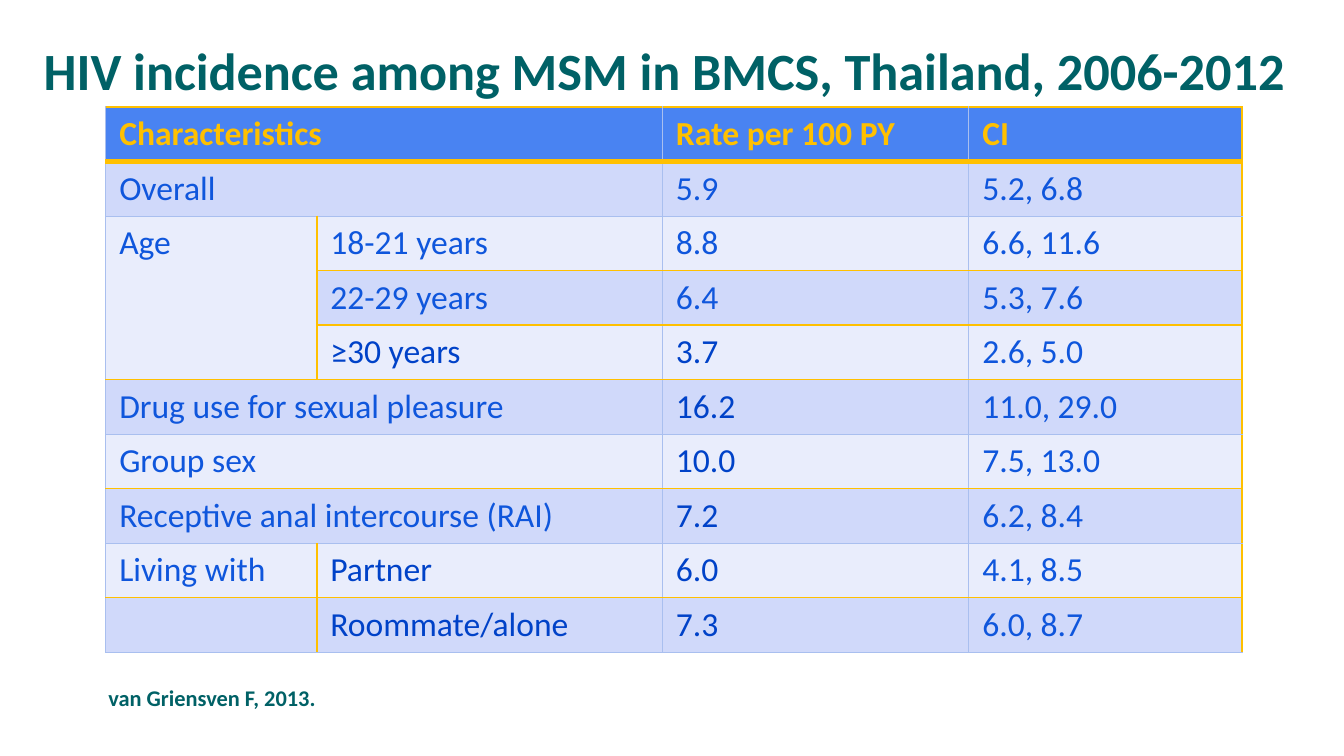
from dataclasses import dataclass

from lxml.etree import SubElement
from pptx import Presentation
from pptx.dml.color import RGBColor as Color
from pptx.enum.text import MSO_ANCHOR as Anchor, PP_ALIGN as Align
from pptx.oxml.ns import qn
from pptx.util import Cm, Pt


@dataclass(frozen=True)
class Theme:
    """Colours, font and type sizes of the deck."""
    font: str = "Calibri"
    teal: str = "006166"
    gold: str = "FFC000"
    header: str = "4983F2"
    bands: tuple = ("E9EDFC", "D0D9FA")
    text: str = "0F56DC"
    strong: str = "0042C8"
    pale: str = "A9BFEF"
    title_size: int = 28
    table_size: int = 18
    source_size: int = 12


ROWS = [
    ["Characteristics", "", "Rate per 100 PY", "CI"],
    ["Overall", "", "5.9", "5.2, 6.8"],
    ["Age", "18-21 years", "8.8", "6.6, 11.6"],
    ["", "22-29 years", "6.4", "5.3, 7.6"],
    ["", "≥30 years", "3.7", "2.6, 5.0"],
    ["Drug use for sexual pleasure", "", "16.2", "11.0, 29.0"],
    ["Group sex", "", "10.0", "7.5, 13.0"],
    ["Receptive anal intercourse (RAI)", "", "7.2", "6.2, 8.4"],
    ["Living with", "Partner", "6.0", "4.1, 8.5"],
    ["", "Roommate/alone", "7.3", "6.0, 8.7"],
]
COLUMN_WIDTHS = [3.99, 6.53, 5.79, 5.16]
ROW_HEIGHT = 1.03
AGE_ROWS = (2, 4)
GOLD_ROW_EDGES = {0, 3, 4, 5, 7, 9}
GOLD_COLUMN_EDGES = {1, 4}
FIRST_STRONG_ROW = 4


def write_text(frame, text, *, font, size, color, bold=False, align=Align.LEFT, spacing=None):
    """Write one formatted paragraph into a text frame."""
    para = frame.paragraphs[0]
    para.alignment = align
    if spacing:
        para.line_spacing = spacing
    span = para.add_run()
    span.text = text
    span.font.name, span.font.size, span.font.bold = font, Pt(size), bold
    span.font.color.rgb = Color.from_string(color)


def draw_border(cell, side, color, width):
    """Add a solid border to one side of a table cell."""
    properties = cell._tc.get_or_add_tcPr()
    line = SubElement(properties, qn(f"a:ln{side}"), w=str(Pt(width)))
    fill = SubElement(line, qn("a:solidFill"))
    SubElement(fill, qn("a:srgbClr"), val=color)


class Page:
    """Hold the theme and the current slide and add elements to it."""

    def __init__(self, deck, theme):
        """Start a title-only slide."""
        self.theme = theme
        self.slide = deck.slides.add_slide(deck.slide_layouts[5])

    def title(self, text, left, top, width, height):
        """Place and fill the title placeholder."""
        box = self.slide.shapes.title
        box.left, box.top, box.width, box.height = map(Cm, (left, top, width, height))
        box.text_frame.word_wrap = True
        box.text_frame.vertical_anchor = Anchor.BOTTOM
        write_text(box.text_frame, text, font=self.theme.font, size=self.theme.title_size,
                   color=self.theme.teal, bold=True, align=Align.CENTER, spacing=Pt(30))

    def source(self, text, left, top, width, height):
        """Add the source line."""
        box = self.slide.shapes.add_textbox(*map(Cm, (left, top, width, height)))
        box.text_frame.word_wrap = True
        box.text_frame.vertical_anchor = Anchor.BOTTOM
        write_text(box.text_frame, text, font=self.theme.font, size=self.theme.source_size,
                   color=self.theme.teal, bold=True, spacing=1.5)

    def row_edge(self, edge):
        """Return colour and width of a horizontal grid line."""
        if edge == 1:
            return self.theme.gold, 3
        return (self.theme.gold, 1) if edge in GOLD_ROW_EDGES else (self.theme.pale, 0.5)

    def column_edge(self, edge):
        """Return colour and width of a vertical grid line."""
        return (self.theme.gold, 1) if edge in GOLD_COLUMN_EDGES else (self.theme.pale, 0.5)

    def cell(self, cell, text, row, column):
        """Format one table cell by its place in the grid."""
        theme = self.theme
        draw_border(cell, "L", *self.column_edge(column))
        draw_border(cell, "R", *self.column_edge(column + cell.span_width))
        draw_border(cell, "T", *self.row_edge(row))
        draw_border(cell, "B", *self.row_edge(row + cell.span_height))
        cell.fill.solid()
        fill = theme.bands[row % 2] if row else theme.header
        cell.fill.fore_color.rgb = Color.from_string(fill)
        strong = row >= FIRST_STRONG_ROW and column in (1, 2)
        body = theme.strong if strong else theme.text
        write_text(cell.text_frame, text, font=theme.font, size=theme.table_size,
                   color=body if row else theme.gold, bold=row == 0)

    def table(self, rows, left, top):
        """Add the incidence table with its merged labels."""
        frame = self.slide.shapes.add_table(
            len(rows), len(COLUMN_WIDTHS), Cm(left), Cm(top),
            Cm(sum(COLUMN_WIDTHS)), Cm(ROW_HEIGHT * len(rows)))
        table = frame.table
        for column, width in zip(table.columns, COLUMN_WIDTHS):
            column.width = Cm(width)
        for row in table.rows:
            row.height = Cm(ROW_HEIGHT)
        for index, values in enumerate(rows):
            if not values[1]:
                table.cell(index, 0).merge(table.cell(index, 1))
        first, last = AGE_ROWS
        table.cell(first, 0).merge(table.cell(last, 0))
        for index, values in enumerate(rows):
            for column, text in enumerate(values):
                cell = table.cell(index, column)
                if not cell.is_spanned:
                    self.cell(cell, text, index, column)


def main():
    """Build and save the deck."""
    deck = Presentation()
    deck.slide_width, deck.slide_height = Cm(25.4), Cm(14.28)
    page = Page(deck, Theme())
    page.title("HIV incidence among MSM in BMCS, Thailand, 2006-2012", 0.28, 0.03, 24.54, 2)
    page.table(ROWS, 2, 2.02)
    page.source("van Griensven F, 2013.", 1.8, 12.7, 4.65, 0.86)
    deck.save("out.pptx")


if __name__ == "__main__":
    main()
